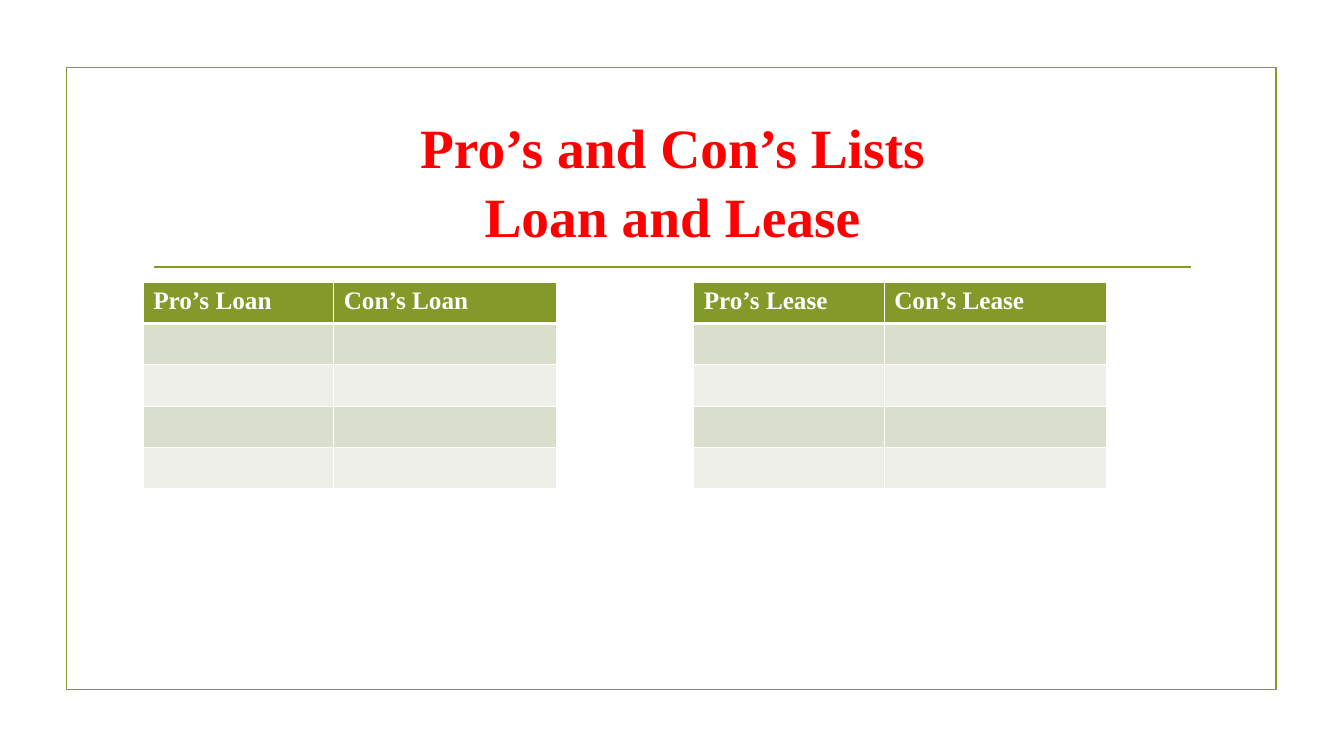
import pptx
import pptx.util
import pptx.dml.color
import pptx.enum.shapes
import pptx.enum.text
import pptx.oxml
import pptx.oxml.ns

Inches, Pt = pptx.util.Inches, pptx.util.Pt
COLORS = {"green": "83992A", "red": "FF0000", "white": "FFFFFF",
          "dark": "D9DECD", "light": "EDEFE8"}
FONT = "Times New Roman"
ROW = 0.41
COLS = (1.89, 2.21)


def tint(name):
    return pptx.dml.color.RGBColor.from_string(COLORS[name])


def add_run(para, text, size, color):
    run = para.add_run()
    run.text = text
    run.font.name = FONT
    run.font.size = Pt(size)
    run.font.bold = True
    run.font.color.rgb = tint(color)


def add_frame(slide, box):
    """Draw the green border and the rule under the title."""
    left, top, width, height = box
    frame = slide.shapes.add_shape(pptx.enum.shapes.MSO_SHAPE.RECTANGLE,
                                   *map(Inches, box))
    frame.shadow.inherit = False
    frame.fill.background()
    rule_y = top + 1.98
    rule = slide.shapes.add_connector(
        pptx.enum.shapes.MSO_CONNECTOR.STRAIGHT, Inches(left + 0.87),
        Inches(rule_y), Inches(left + width - 0.85), Inches(rule_y))
    props = rule.element.find(pptx.oxml.ns.qn("p:spPr"))
    for shape in (frame, rule):
        shape.line.color.rgb = tint("green")
        shape.line.width = Pt(1.25)
    props.append(pptx.oxml.parse_xml(
        f"<a:effectLst {pptx.oxml.ns.nsdecls('a')}/>"))


def add_title(slide, box, lines):
    frame = slide.shapes.add_textbox(*map(Inches, box)).text_frame
    frame.word_wrap = True
    frame.vertical_anchor = pptx.enum.text.MSO_ANCHOR.MIDDLE
    para = frame.paragraphs[0]
    para.alignment = pptx.enum.text.PP_ALIGN.CENTER
    para.line_spacing = 1.03
    for index, line in enumerate(lines):
        if index:
            para.add_line_break()
        add_run(para, line, 39.6, "red")


def set_edges(cell, base):
    """Draw white cell borders, with the bottom one base points wide."""
    props = cell._tc.get_or_add_tcPr()
    edges = {"L": 1, "R": 1, "T": 1, "B": base}
    for index, (side, width) in enumerate(edges.items()):
        props.insert(index, pptx.oxml.parse_xml(
            f'<a:ln{side} {pptx.oxml.ns.nsdecls("a")} w="{Pt(width)}">'
            f'<a:solidFill><a:srgbClr val="{COLORS["white"]}"/></a:solidFill>'
            f'</a:ln{side}>'))


def add_list(slide, left, top, heads, rows=5):
    """Add a table with a header row and empty banded rows."""
    table = slide.shapes.add_table(
        rows, len(heads), Inches(left), Inches(top),
        Inches(sum(COLS)), Inches(rows * ROW)).table
    for col, width in zip(table.columns, COLS):
        col.width = Inches(width)
    for r, row in enumerate(table.rows):
        row.height = Inches(ROW)
        for cell, head in zip(row.cells, heads):
            cell.fill.solid()
            band = "dark" if r % 2 else "light"
            cell.fill.fore_color.rgb = tint(band if r else "green")
            set_edges(cell, 1 if r else 3)
            if r == 0:
                add_run(cell.text_frame.paragraphs[0], head, 18, "white")


def main():
    deck = pptx.Presentation()
    deck.slide_width, deck.slide_height = Inches(13.33), Inches(7.5)
    slide = deck.slides.add_slide(deck.slide_layouts[6])
    add_frame(slide, (0.66, 0.67, 12, 6.17))
    add_title(slide, (1.42, 1.07, 10.5, 1.43),
              ("Pro’s and Con’s Lists", "Loan and Lease"))
    for left, topic in ((1.42, "Loan"), (6.88, "Lease")):
        add_list(slide, left, 2.8, (f"Pro’s {topic}", f"Con’s {topic}"))
    deck.save("out.pptx")


if __name__ == "__main__":
    main()
